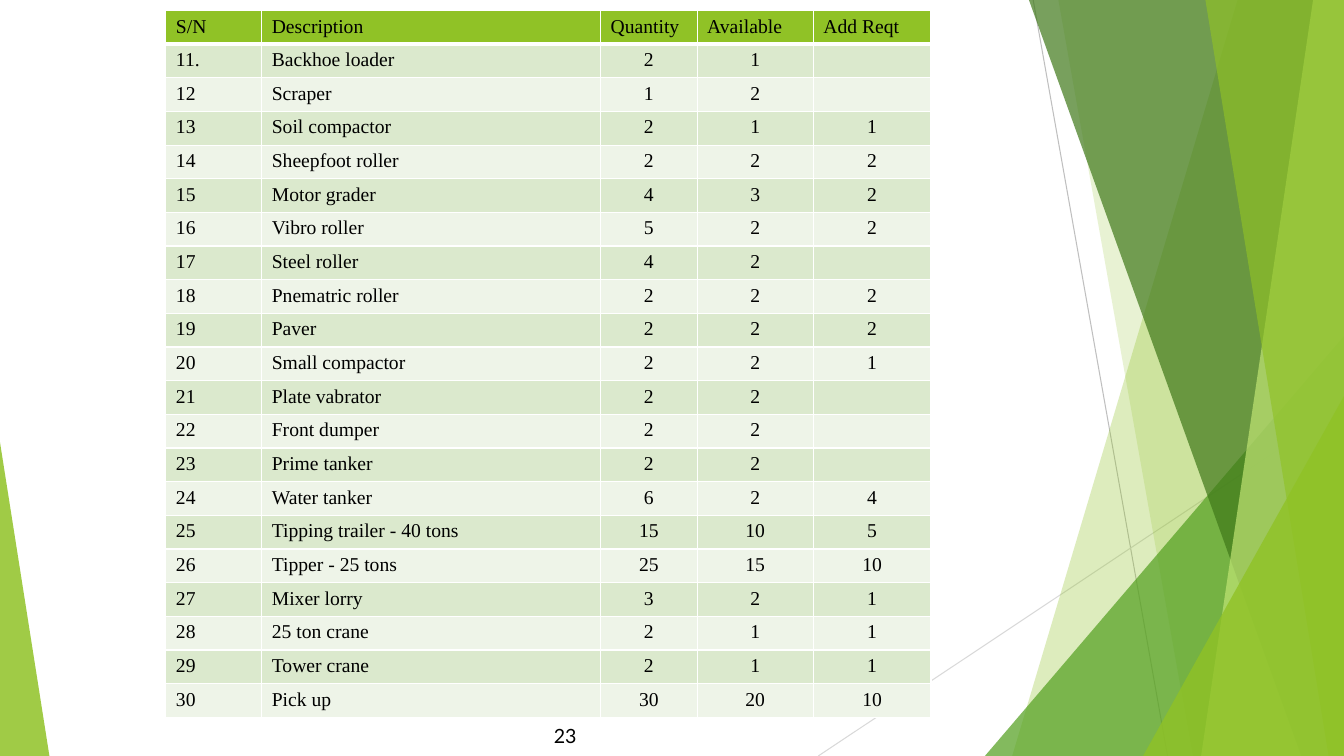
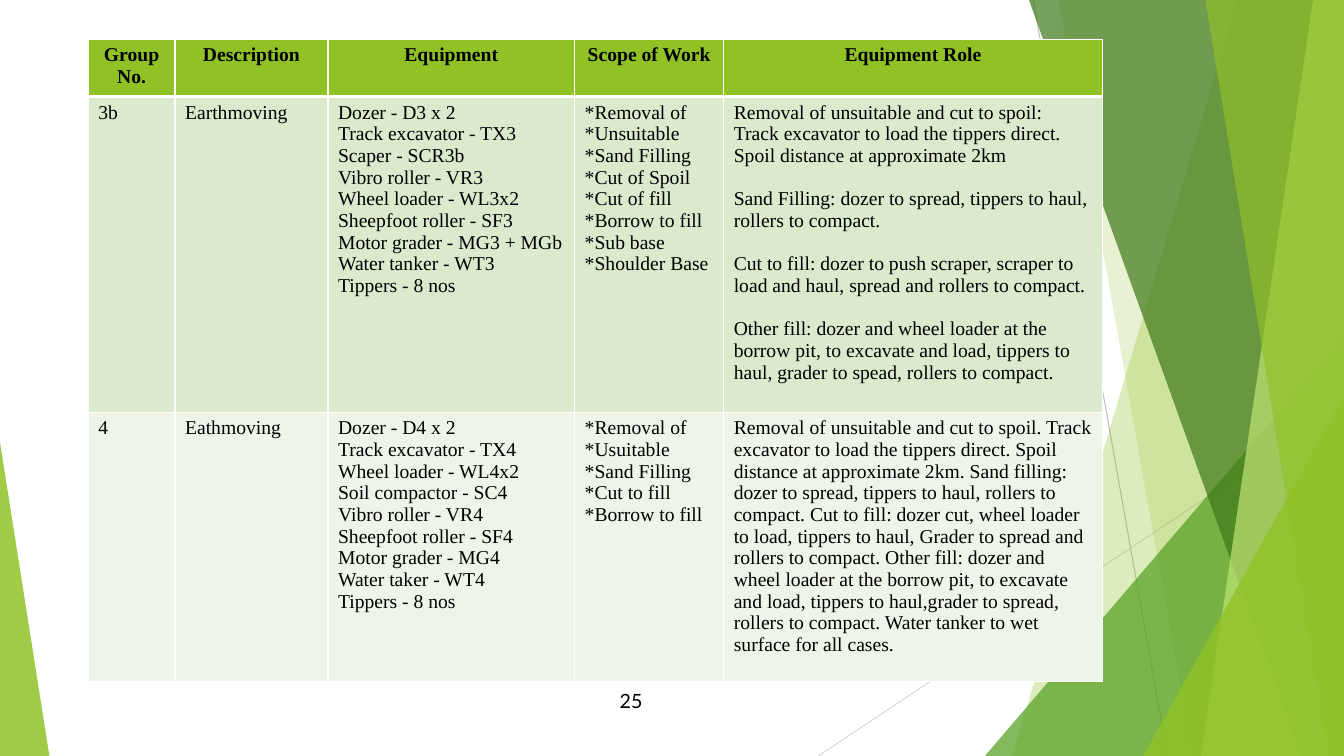
from dataclasses import dataclass

from lxml.etree import SubElement
from pptx import Presentation
from pptx.dml.color import RGBColor
from pptx.enum.shapes import MSO_CONNECTOR, MSO_SHAPE
from pptx.enum.text import MSO_ANCHOR, PP_ALIGN
from pptx.oxml.ns import qn
from pptx.util import Pt

WIDTH, HEIGHT = 960, 540
GREEN, LEAF, FOREST, LIME = "90C226", "54A021", "3F7819", "C0E474"
ROW_FILLS = ("DBE9CD", "EEF4E8")
WHITE, BLACK = "FFFFFF", "000000"
LEFT, CENTER, RIGHT = PP_ALIGN.LEFT, PP_ALIGN.CENTER, PP_ALIGN.RIGHT
TOP, MIDDLE = MSO_ANCHOR.TOP, MSO_ANCHOR.MIDDLE


@dataclass(frozen=True)
class Ray:
    start: tuple[float, float]
    end: tuple[float, float]
    color: str


@dataclass(frozen=True)
class Band:
    """Full-height area from a slanted left side to the right slide edge."""
    top_x: float
    bottom_x: float
    color: str
    opacity: int


@dataclass(frozen=True)
class Wedge:
    """Right triangle that stands on the bottom slide edge."""
    left: float
    top: float
    width: float
    apex: float
    color: str
    opacity: int


@dataclass(frozen=True)
class Column:
    title: str
    width: float
    align: PP_ALIGN = LEFT
    gap: float = 0


@dataclass(frozen=True)
class TablePage:
    number: str
    number_at: tuple[float, float]
    table_at: tuple[float, float]
    columns: list[Column]
    heights: list[float]
    rows: list[tuple[str, ...]]
    header_bold: bool = False
    header_align: PP_ALIGN = LEFT
    header_anchor: MSO_ANCHOR = TOP


DECOR = [
    Ray((738, 0), (834, HEIGHT), "BFBFBF"),
    Ray((WIDTH, 290), (584.5, HEIGHT), "D9D9D9"),
    Band(884, 723, GREEN, 30),
    Band(756, 852, GREEN, 20),
    Wedge(703.5, 240, 256.5, 1, LEAF, 72),
    Band(735, 929.5, FOREST, 70),
    Band(938, 858, LIME, 70),
    Band(861, 949, GREEN, 65),
    Wedge(816.5, 283, 143.5, 1, GREEN, 80),
    Wedge(0, 316, 35.3, 0, GREEN, 85),
]

STOCK = TablePage(
    number="23", number_at=(365, 511), table_at=(118.5, 7.5),
    columns=[
        Column("S/N", 68.5), Column("Description", 242),
        Column("Quantity", 69, CENTER), Column("Available", 83, CENTER),
        Column("Add Reqt", 84, CENTER),
    ],
    heights=[24] * 21,
    header_anchor=MIDDLE,
    rows=[
        ("11.", "Backhoe loader", "2", "1", ""),
        ("12", "Scraper", "1", "2", ""),
        ("13", "Soil compactor", "2", "1", "1"),
        ("14", "Sheepfoot roller", "2", "2", "2"),
        ("15", "Motor grader", "4", "3", "2"),
        ("16", "Vibro roller", "5", "2", "2"),
        ("17", "Steel roller", "4", "2", ""),
        ("18", "Pnematric roller", "2", "2", "2"),
        ("19", "Paver", "2", "2", "2"),
        ("20", "Small compactor", "2", "2", "1"),
        ("21", "Plate vabrator", "2", "2", ""),
        ("22", "Front dumper", "2", "2", ""),
        ("23", "Prime tanker", "2", "2", ""),
        ("24", "Water tanker", "6", "2", "4"),
        ("25", "Tipping trailer - 40 tons", "15", "10", "5"),
        ("26", "Tipper - 25 tons", "25", "15", "10"),
        ("27", "Mixer lorry", "3", "2", "1"),
        ("28", "25 ton crane", "2", "1", "1"),
        ("29", "Tower crane", "2", "1", "1"),
        ("30", "Pick up", "30", "20", "10"),
    ],
)

GROUPS = TablePage(
    number="25", number_at=(412, 486), table_at=(63, 28),
    columns=[
        Column("Group No.", 62), Column("Description", 109.3),
        Column("Equipment", 176.2), Column("Scope of Work", 106.5),
        Column("Equipment Role", 270.5, gap=15.5),
    ],
    heights=[41, 225.5, 192],
    header_bold=True, header_align=CENTER,
    rows=[
        (
            "3b", "Earthmoving",
            "Dozer - D3 x 2\nTrack excavator - TX3\nScaper - SCR3b\n"
            "Vibro roller - VR3\nWheel loader - WL3x2\nSheepfoot roller - SF3\n"
            "Motor grader - MG3 + MGb\nWater tanker - WT3\nTippers - 8 nos",
            "*Removal of\n*Unsuitable\n*Sand Filling\n*Cut of Spoil\n"
            "*Cut of fill\n*Borrow to fill\n*Sub base\n*Shoulder Base",
            "Removal of unsuitable and cut to spoil: Track excavator to load the "
            "tippers direct. Spoil distance at approximate 2km\n"
            "Sand Filling: dozer to spread, tippers to haul, rollers to compact.\n"
            "Cut to fill: dozer to push scraper, scraper to load and haul, spread "
            "and rollers to compact.\n"
            "Other fill: dozer and wheel loader at the borrow pit, to excavate and "
            "load, tippers to haul, grader to spead, rollers to compact.",
        ),
        (
            "4", "Eathmoving",
            "Dozer - D4 x 2\nTrack excavator - TX4\nWheel loader - WL4x2\n"
            "Soil compactor - SC4\nVibro roller - VR4\nSheepfoot roller - SF4\n"
            "Motor grader - MG4\nWater taker - WT4\nTippers - 8 nos",
            "*Removal of\n*Usuitable\n*Sand Filling\n*Cut to fill\n*Borrow to fill",
            "Removal of unsuitable and cut to spoil. Track excavator to load the "
            "tippers direct. Spoil distance at approximate 2km. Sand filling: dozer "
            "to spread, tippers to haul, rollers to compact. Cut to fill: dozer cut, "
            "wheel loader to load, tippers to haul, Grader to spread and rollers to "
            "compact. Other fill: dozer and wheel loader at the borrow pit, to "
            "excavate and load, tippers to haul,grader to spread, rollers to "
            "compact. Water tanker to wet surface for all cases.",
        ),
    ],
)


def rgb(color: str) -> RGBColor:
    return RGBColor.from_string(color)


def write_text(tf, text: str, *, font: str = "Times New Roman", size: float = 14,
               bold: bool = False, align: PP_ALIGN = LEFT, gap: float = 0) -> None:
    """Write one paragraph per line of text, with gap points between them."""
    for i, line in enumerate(text.split("\n")):
        p = tf.add_paragraph() if i else tf.paragraphs[0]
        p.alignment = align
        if i and gap:
            p.space_before = Pt(gap)
        if not line:
            SubElement(p._p, qn("a:endParaRPr"), sz=str(size * 100))
            continue
        r = p.add_run()
        r.text = line
        r.font.name, r.font.size, r.font.bold = font, Pt(size), bold
        r.font.color.rgb = rgb(BLACK)


def paint(sp, color: str, opacity: int) -> None:
    sp.shadow.inherit = False
    sp.line.fill.background()
    sp.fill.solid()
    sp.fill.fore_color.rgb = rgb(color)
    clr = sp.fill._xPr.find(f".//{qn('a:srgbClr')}")
    SubElement(clr, qn("a:alpha"), val=str(opacity * 1000))


def draw_ray(s, ray: Ray):
    sp = s.shapes.add_connector(
        MSO_CONNECTOR.STRAIGHT, *map(Pt, ray.start), *map(Pt, ray.end))
    sp.line.color.rgb = rgb(ray.color)
    sp.line.width = Pt(0.75)
    SubElement(sp.element.spPr, qn("a:effectLst"))
    return sp


def draw_band(s, band: Band):
    builder = s.shapes.build_freeform(Pt(band.top_x), 0)
    corners = [(WIDTH, 0), (WIDTH, HEIGHT), (band.bottom_x, HEIGHT)]
    builder.add_line_segments([(Pt(x), Pt(y)) for x, y in corners])
    sp = builder.convert_to_shape()
    paint(sp, band.color, band.opacity)
    return sp


def draw_wedge(s, wedge: Wedge):
    sp = s.shapes.add_shape(
        MSO_SHAPE.ISOSCELES_TRIANGLE, Pt(wedge.left), Pt(wedge.top),
        Pt(wedge.width), Pt(HEIGHT - wedge.top))
    sp.adjustments[0] = wedge.apex
    paint(sp, wedge.color, wedge.opacity)
    return sp


def move_decor_to_layout(s, layout) -> None:
    """Draw the decor on a slide, then hand it to the layout all slides share."""
    for ph in list(layout.placeholders):
        layout.shapes.element.remove(ph.element)
    draw = {Ray: draw_ray, Band: draw_band, Wedge: draw_wedge}
    shapes = [draw[type(item)](s, item) for item in DECOR]
    for sp in shapes:
        layout.shapes.element.append(sp.element)


def set_borders(cell, top: float, bottom: float) -> None:
    tc_pr = cell._tc.get_or_add_tcPr()
    for side, width in (("L", 1), ("R", 1), ("T", top), ("B", bottom)):
        ln = SubElement(tc_pr, qn(f"a:ln{side}"), w=str(Pt(width)))
        fill = SubElement(ln, qn("a:solidFill"))
        SubElement(fill, qn("a:srgbClr"), val=WHITE)


def add_table(s, page: TablePage) -> None:
    x, y = page.table_at
    width = sum(c.width for c in page.columns)
    table = s.shapes.add_table(
        len(page.heights), len(page.columns),
        Pt(x), Pt(y), Pt(width), Pt(sum(page.heights))).table
    for i, height in enumerate(page.heights):
        table.rows[i].height = Pt(height)
    for j, col in enumerate(page.columns):
        table.columns[j].width = Pt(col.width)
        for i, text in enumerate([col.title] + [row[j] for row in page.rows]):
            cell = table.cell(i, j)
            header = i == 0
            set_borders(cell, top=3 if i == 1 else 1, bottom=3 if header else 1)
            cell.fill.solid()
            cell.fill.fore_color.rgb = rgb(GREEN if header else ROW_FILLS[(i - 1) % 2])
            cell.vertical_anchor = page.header_anchor if header else TOP
            write_text(cell.text_frame, text, bold=header and page.header_bold,
                       align=page.header_align if header else col.align, gap=col.gap)


def add_page_number(s, page: TablePage) -> None:
    x, y = page.number_at
    tf = s.shapes.add_textbox(Pt(x), Pt(y), Pt(54), Pt(29)).text_frame
    tf.word_wrap = True
    tf.vertical_anchor = MIDDLE
    write_text(tf, page.number, font="Lato", align=RIGHT)


def main() -> None:
    prs = Presentation()
    prs.slide_width, prs.slide_height = Pt(WIDTH), Pt(HEIGHT)
    layout = prs.slide_layouts[6]
    for i, page in enumerate((STOCK, GROUPS)):
        s = prs.slides.add_slide(layout)
        if i == 0:
            move_decor_to_layout(s, layout)
        add_page_number(s, page)
        add_table(s, page)
    prs.save("out.pptx")


if __name__ == "__main__":
    main()
